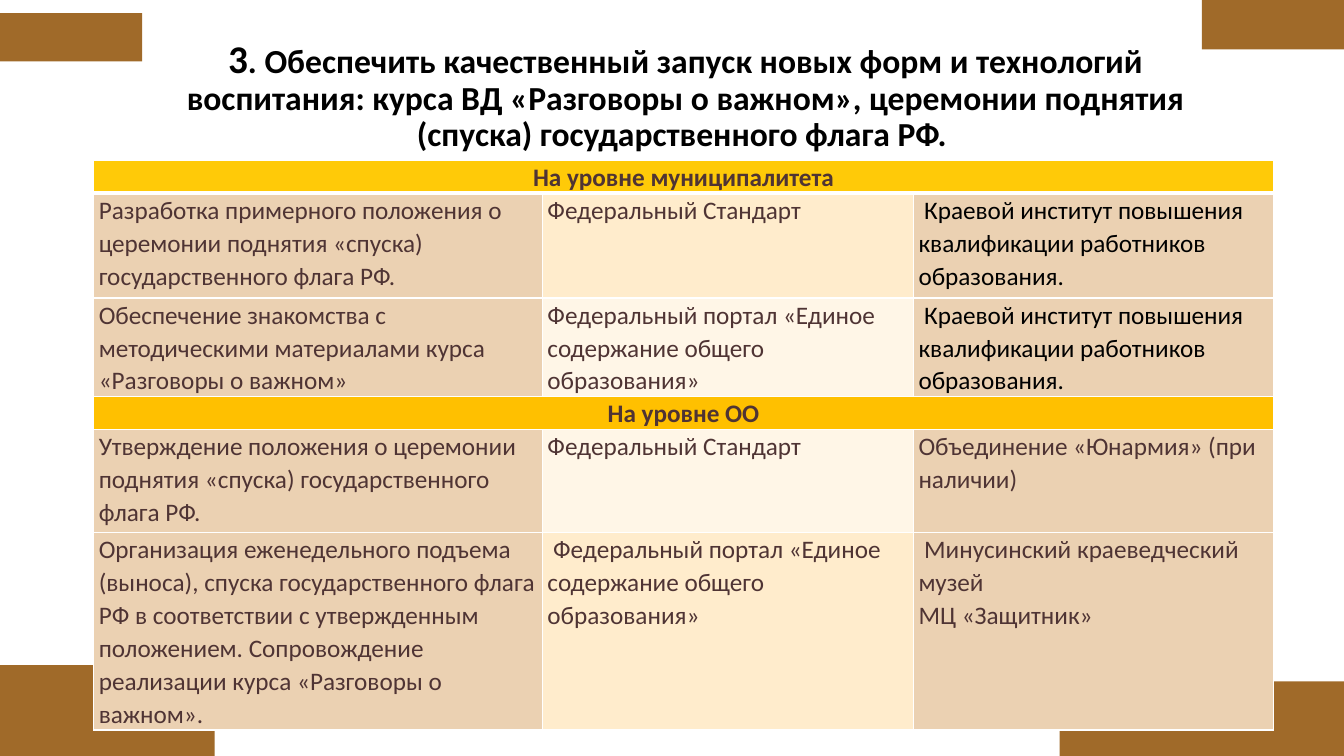
from lxml import etree
from pptx import Presentation
from pptx.dml.color import RGBColor
from pptx.enum import shapes, text
from pptx.oxml.ns import qn
from pptx.util import Inches, Pt

FONT = "Calibri"
BROWN, INK, BLACK, WHITE = "A06A29", "4F3434", "000000", "FFFFFF"
SAND, CREAM, IVORY = "EBD1B2", "FFECCC", "FFF6E7"

CORNERS = [
    (10.51, 6.76, 2.82, 0.74),
    (11.92, 0, 1.41, 0.49),
    (0, 6.6, 2.13, 0.9),
    (0, 0.13, 1.41, 0.48),
]
TITLE_RUNS = [
    ("3", 28),
    (". Обеспечить качественный запуск новых форм и технологий воспитания: "
     "курса ВД «Разговоры о важном», церемонии поднятия (спуска) "
     "государственного флага РФ. ", 24),
]
COLUMN_WIDTHS = [4.45, 3.68, 3.57]
ROW_HEIGHTS = [0.28, 1.04, 0.49, 0.28, 1.02, 1.53]
INSTITUTE = " Краевой институт повышения квалификации работников образования."
PORTAL = "Федеральный портал «Единое содержание общего образования»"
STANDARD = "Федеральный Стандарт"
# A row with one text is a section heading; the colour fills its middle column.
ROWS = [
    (["На уровне муниципалитета"], "FFCA08"),
    (["Разработка примерного положения о церемонии поднятия «спуска) "
      "государственного флага РФ.", STANDARD, INSTITUTE], CREAM),
    (["Обеспечение знакомства с методическими материалами курса "
      "«Разговоры о важном»", PORTAL, INSTITUTE], IVORY),
    (["На уровне ОО"], "FFC000"),
    (["Утверждение положения о церемонии поднятия «спуска) "
      "государственного флага РФ.", STANDARD,
      "Объединение «Юнармия» (при наличии)"], IVORY),
    (["Организация еженедельного подъема (выноса), спуска государственного "
      "флага РФ в соответствии с утвержденным положением. Сопровождение "
      "реализации курса «Разговоры о важном».", " " + PORTAL,
      " Минусинский краеведческий музей\nМЦ «Защитник»"], CREAM),
]


def rgb(color):
    return RGBColor.from_string(color)


def format_font(font, size, color, bold):
    font.name = FONT
    font.size = Pt(size)
    font.bold = bold
    font.color.rgb = rgb(color)


def add_block(slide, box):
    shape = slide.shapes.add_shape(shapes.MSO_SHAPE.RECTANGLE, *map(Inches, box))
    shape.shadow.inherit = False
    shape.fill.solid()
    shape.fill.fore_color.rgb = rgb(BROWN)
    shape.line.fill.background()


def fill_title(title):
    title.left, title.top, title.width, title.height = map(
        Inches, (1.41, 0.27, 10.78, 1.38))
    frame = title.text_frame
    frame.auto_size = text.MSO_AUTO_SIZE.NONE
    frame.word_wrap = True
    frame.vertical_anchor = text.MSO_ANCHOR.MIDDLE
    paragraph = frame.paragraphs[0]
    paragraph.alignment = text.PP_ALIGN.CENTER
    paragraph.line_spacing = 0.9
    for words, size in TITLE_RUNS:
        run = paragraph.add_run()
        run.text = words
        format_font(run.font, size, BLACK, True)


def set_borders(cell, top, bottom):
    """Draw white borders; top and bottom are widths in points."""
    properties = cell._tc.get_or_add_tcPr()
    widths = {"a:lnL": 1, "a:lnR": 1, "a:lnT": top, "a:lnB": bottom}
    for position, (tag, width) in enumerate(widths.items()):
        line = etree.Element(qn(tag), w=str(Pt(width)))
        fill = etree.SubElement(line, qn("a:solidFill"))
        etree.SubElement(fill, qn("a:srgbClr"), val=WHITE)
        properties.insert(position, line)


def format_cell(cell, fill, row_index):
    cell.margin_left = cell.margin_right = Inches(0.05)
    cell.margin_top = cell.margin_bottom = 0
    cell.fill.solid()
    cell.fill.fore_color.rgb = rgb(fill)
    set_borders(cell, top=3 if row_index == 1 else 1,
                bottom=3 if row_index == 0 else 1)


def write_cell(cell, words, heading):
    cell.text_frame.text = words
    color = BLACK if words == INSTITUTE else INK
    for paragraph in cell.text_frame.paragraphs:
        paragraph.line_spacing = 1.07
        if heading:
            paragraph.alignment = text.PP_ALIGN.CENTER
        for run in paragraph.runs:
            format_font(run.font, 18, color, heading)


def add_plan_table(slide):
    frame = slide.shapes.add_table(
        len(ROWS), len(COLUMN_WIDTHS), Inches(0.93), Inches(1.59),
        Inches(sum(COLUMN_WIDTHS)), Inches(sum(ROW_HEIGHTS)))
    table = frame.table
    for column, width in zip(table.columns, COLUMN_WIDTHS):
        column.width = Inches(width)
    for row, height in zip(table.rows, ROW_HEIGHTS):
        row.height = Inches(height)
    for row_index, (texts, color) in enumerate(ROWS):
        cells = list(table.rows[row_index].cells)
        heading = len(texts) == 1
        fills = [color] * 3 if heading else [SAND, color, SAND]
        for cell, fill in zip(cells, fills):
            format_cell(cell, fill, row_index)
        if heading:
            cells[0].merge(cells[-1])
        for cell, words in zip(cells, texts):
            write_cell(cell, words, heading)


def main():
    presentation = Presentation()
    presentation.slide_width = Inches(13.33)
    presentation.slide_height = Inches(7.5)
    slide = presentation.slides.add_slide(presentation.slide_layouts[5])
    fill_title(slide.shapes.title)
    for box in CORNERS:
        add_block(slide, box)
    add_plan_table(slide)
    presentation.save("out.pptx")


if __name__ == "__main__":
    main()
